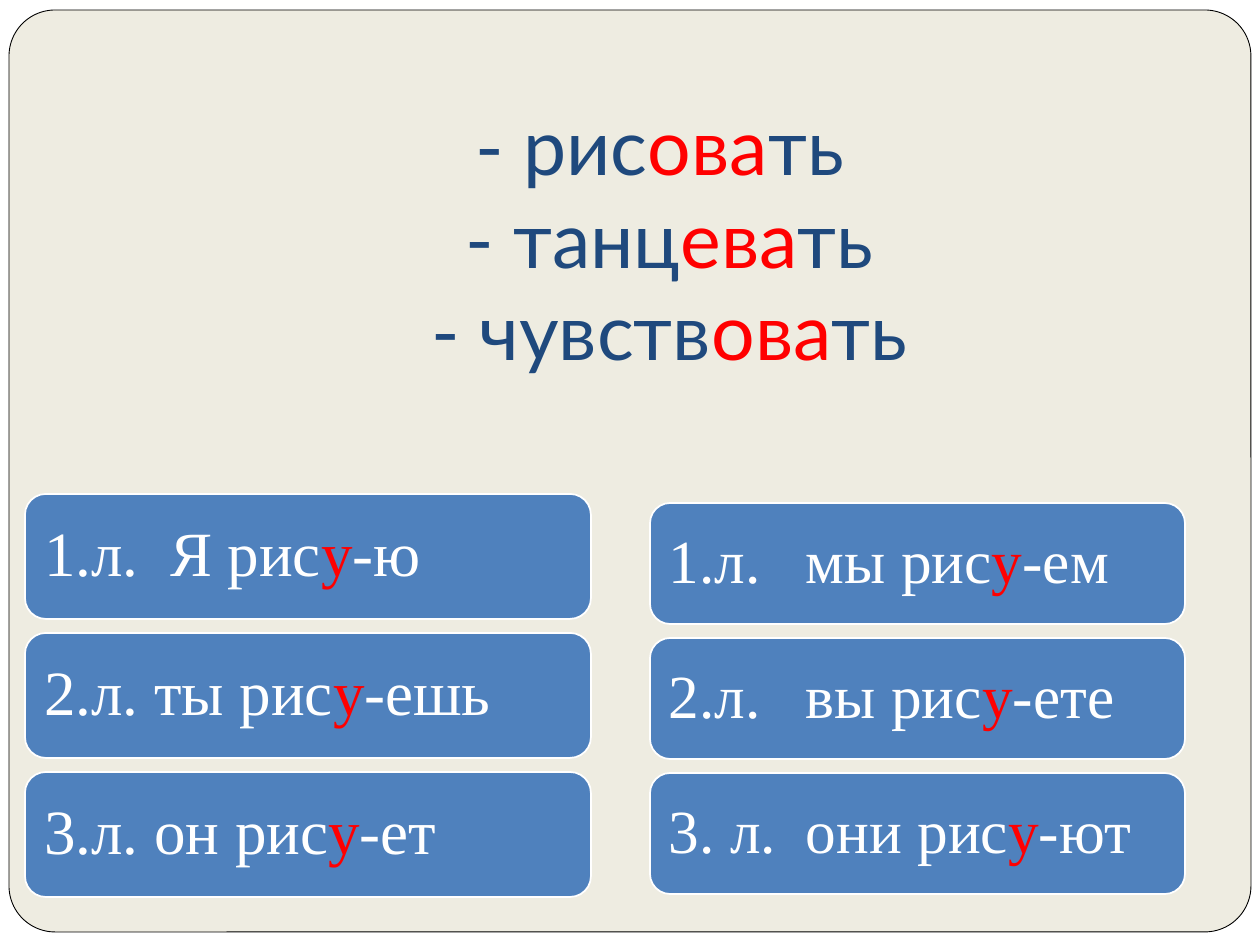
from dataclasses import dataclass

import pptx
import pptx.dml.color
import pptx.enum.shapes
import pptx.enum.text
import pptx.oxml.ns
import pptx.util
from lxml import etree

SCALE = 914400 / 126
NAVY, RED, WHITE, BLUE, CREAM = "1F497D", "FF0000", "FFFFFF", "4F81BD", "EEECE1"
SERIF = "Times New Roman"


@dataclass
class Column:
    left: int
    top: int
    width: int
    height: int
    pitch: int
    size: int
    tab: int
    rows: list[tuple[str, str, str]]


VERBS = [("- рис", "ова", "ть "), ("- танц", "ева", "ть"), ("- чувств", "ова", "ть")]
COLUMNS = [
    Column(25, 494, 566, 125, 139, 36, 126, [
        ("1.л.\tЯ рис", "у", "-ю"),
        ("2.л. ты рис", "у", "-ешь"),
        ("3.л. он рис", "у", "-ет"),
    ]),
    Column(650, 503, 535, 121, 135, 35, 137, [
        ("1.л.\tмы рис", "у", "-ем"),
        ("2.л.\tвы рис", "у", "-ете"),
        ("3. л.\tони рис", "у", "-ют"),
    ]),
]


def px(count: int) -> pptx.util.Emu:
    return pptx.util.Emu(round(count * SCALE))


def tint(code: str) -> pptx.dml.color.RGBColor:
    return pptx.dml.color.RGBColor.from_string(code)


def panel(slide, box: tuple[int, int, int, int], fill: str, line: str, width: float):
    shape = slide.shapes.add_shape(
        pptx.enum.shapes.MSO_SHAPE.ROUNDED_RECTANGLE, *map(px, box))
    shape.shadow.inherit = False
    shape.fill.solid()
    shape.fill.fore_color.rgb = tint(fill)
    shape.line.color.rgb = tint(line)
    shape.line.width = pptx.util.Pt(width)
    return shape


def margins(frame, left: int, top: int, right: int, bottom: int) -> None:
    frame.margin_left, frame.margin_top = px(left), px(top)
    frame.margin_right, frame.margin_bottom = px(right), px(bottom)


def write(para, parts: tuple[str, str, str], base: str) -> None:
    for text, code in zip(parts, (base, RED, base)):
        run = para.add_run()
        run.text = text
        run.font.color.rgb = tint(code)


def style(para, name: str, size: int) -> None:
    para.font.name = name
    para.font.size = pptx.util.Pt(size)


def heading(slide) -> None:
    title = slide.shapes.title
    title.left, title.top, title.width, title.height = map(px, (362, 125, 615, 356))
    frame = title.text_frame
    frame.word_wrap = True
    frame.auto_size = pptx.enum.text.MSO_AUTO_SIZE.NONE
    frame.vertical_anchor = pptx.enum.text.MSO_ANCHOR.BOTTOM
    margins(frame, 13, 6, 13, 105)
    para = frame.paragraphs[0]
    para.alignment = pptx.enum.text.PP_ALIGN.CENTER
    style(para, "Lato", 44)
    for index, verb in enumerate(VERBS):
        if index:
            para.add_line_break()
        write(para, verb, NAVY)


def column(slide, col: Column) -> None:
    for index, parts in enumerate(col.rows):
        top = col.top + index * col.pitch
        card = panel(slide, (col.left, top, col.width, col.height), BLUE, WHITE, 1)
        frame = card.text_frame
        frame.word_wrap = True
        frame.vertical_anchor = pptx.enum.text.MSO_ANCHOR.MIDDLE
        margins(frame, 13, 13, 13, 13)
        para = frame.paragraphs[0]
        para.alignment = pptx.enum.text.PP_ALIGN.LEFT
        para.line_spacing = 0.9
        if "\t" in parts[0]:
            props = para._p.get_or_add_pPr()
            tabs = etree.SubElement(props, pptx.oxml.ns.qn("a:tabLst"))
            etree.SubElement(tabs, pptx.oxml.ns.qn("a:tab"), pos=str(px(col.tab)), algn="l")
        style(para, SERIF, col.size)
        write(para, parts, WHITE)


def main() -> None:
    deck = pptx.Presentation()
    deck.slide_width, deck.slide_height = px(1260), px(945)
    slide = deck.slides.add_slide(deck.slide_layouts[5])
    slide.background.fill.solid()
    slide.background.fill.fore_color.rgb = tint(WHITE)
    back = panel(slide, (9, 10, 1242, 922), CREAM, "000000", 0.5)
    back.adjustments[0] = 0.05
    slide.shapes.title._element.addprevious(back._element)
    heading(slide)
    for col in COLUMNS:
        column(slide, col)
    deck.save("out.pptx")


if __name__ == "__main__":
    main()
